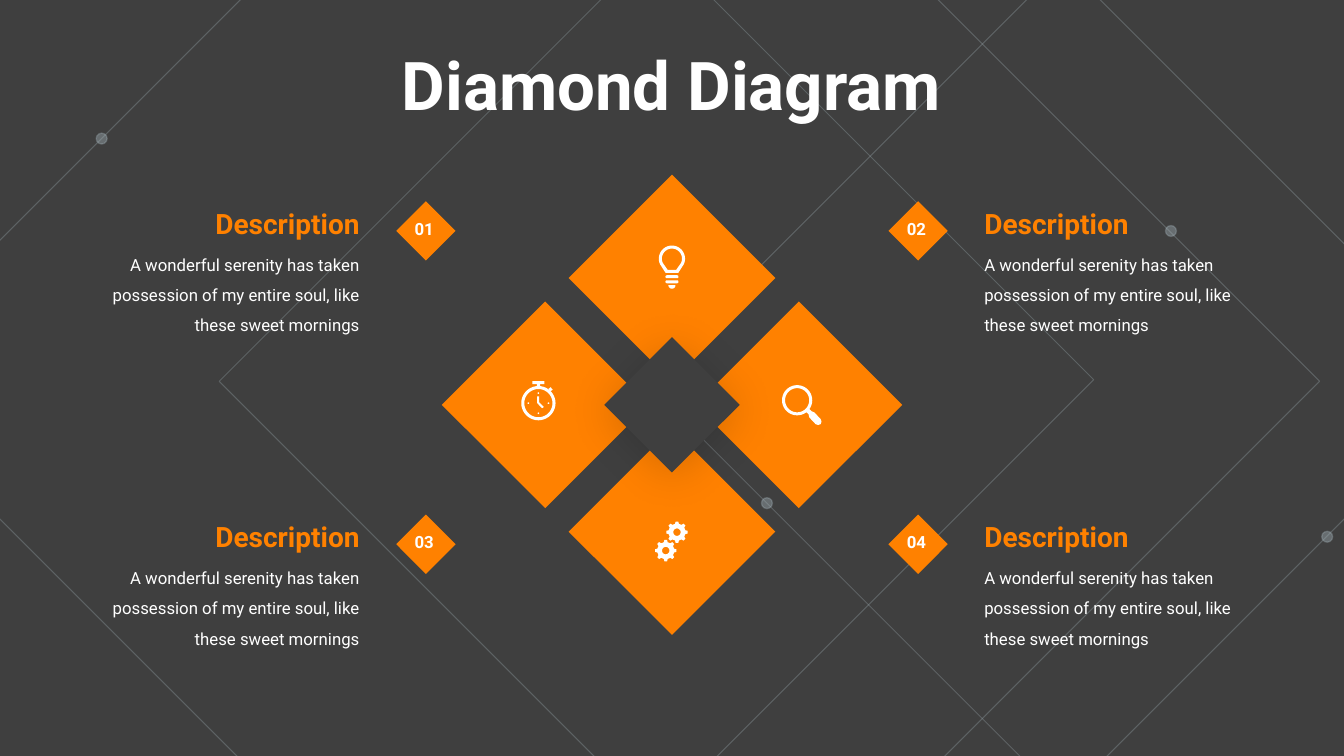
import math

import pptx
import pptx.dml.color
import pptx.enum.shapes
import pptx.enum.text
import pptx.oxml
import pptx.oxml.ns
import pptx.util

# Square grid: 160 columns by 90 rows; every length below is in cells
COLS, ROWS = 160, 90
CELL = pptx.util.Inches(1) / 12
FONT = "Roboto"
COLORS = {"ground": "3F3F3F", "accent": "FF8100", "text": "FFFFFF", "lattice": "A5B4BB"}
BODY = "A wonderful serenity has taken possession of my entire soul, like these sweet mornings"

MID_X, MID_Y = COLS / 2, 48.2
TILE_STEP = 15.1
BADGE_DX, TEXT_DX, TEXT_W = 29.3, 36, 34.8
FIRST_ROW, ROW_STEP = 27.5, 37.3

SHAPE = pptx.enum.shapes.MSO_SHAPE
ALIGN = pptx.enum.text.PP_ALIGN


def grid(*cells):
    return [round(c * CELL) for c in cells]


def rgb(name):
    return pptx.dml.color.RGBColor.from_string(COLORS[name])


def paint(fmt, color, alpha=None):
    """Solid colour for a fill, with optional opacity in percent."""
    fmt.solid()
    fmt.fore_color.rgb = rgb(color)
    if alpha is not None:
        clr = fmt._xPr.find(".//" + pptx.oxml.ns.qn("a:srgbClr"))
        clr.append(pptx.oxml.parse_xml(
            f'<a:alpha {pptx.oxml.ns.nsdecls("a")} val="{alpha * 1000}"/>'))


def style(sp, fill=None, alpha=None, line=None):
    sp.shadow.inherit = False
    if fill:
        paint(sp.fill, fill, alpha)
    else:
        sp.fill.background()
    if line:
        sp.line.width = pptx.util.Pt(line)
        paint(sp.line.fill, "lattice", 29)
    else:
        sp.line.fill.background()
    return sp


def add_preset(s, kind, cx, cy, w, h, **fmt):
    sp = s.shapes.add_shape(kind, *grid(cx - w / 2, cy - h / 2, w, h))
    return style(sp, **fmt)


def add_diamond(s, cx, cy, side, fill="accent"):
    sp = add_preset(s, SHAPE.RECTANGLE, cx, cy, side, side, fill=fill)
    sp.rotation = 45
    return sp


def add_outline(s, *contours, **fmt):
    """Closed outline; a contour inside another one is a hole."""
    builder = s.shapes.build_freeform(*grid(*contours[0][0]))
    for i, points in enumerate(contours):
        if i:
            builder.move_to(*grid(*points[0]))
        builder.add_line_segments([grid(*pt) for pt in points[1:]])
    return style(builder.convert_to_shape(), **fmt)


def set_text(sp, text, size=12, color="text", bold=False, align=ALIGN.LEFT,
             spacing=None, before=None, anchor=None, grow=True):
    tf = sp.text_frame
    tf.word_wrap = True
    auto = pptx.enum.text.MSO_AUTO_SIZE
    tf.auto_size = auto.SHAPE_TO_FIT_TEXT if grow else auto.NONE
    if anchor is not None:
        tf.vertical_anchor = anchor
    p = tf.paragraphs[0]
    p.alignment = align
    if spacing:
        p.line_spacing = spacing
    if before:
        p.space_before = pptx.util.Pt(before)
    r = p.add_run()
    r.text = text
    r.font.name, r.font.size, r.font.bold = FONT, pptx.util.Pt(size), bold
    r.font.color.rgb = rgb(color)


def add_text(s, x, y, w, h, text, **fmt):
    set_text(s.shapes.add_textbox(*grid(x, y, w, h)), text, **fmt)


def polar(cx, cy, radius, degrees):
    a = math.radians(degrees)
    return cx + radius * math.cos(a), cy + radius * math.sin(a)


def arc(cx, cy, radius, start=0, end=360, steps=40):
    return [polar(cx, cy, radius, start + (end - start) * i / steps)
            for i in range(steps + 1)]


# Background lattice
def add_lattice(s):
    for cx, cy, half in ((126.6, 45.4, 49.8), (91.6, 45.4, 65.5), (56.8, 45.2, 73.4)):
        corners = [polar(cx, cy, half, a) for a in (90, 180, 270, 0)]
        add_outline(s, corners + corners[:1], line=0.75)
    for cx, cy in ((91.3, 59.9), (139.4, 27.5), (158, 63.9), (12.1, 16.5)):
        add_preset(s, SHAPE.OVAL, cx, cy, 1.3, 1.3, fill="lattice", alpha=40, line=1)


def add_title(s):
    title = s.shapes.title
    title.left, title.top, title.width, title.height = grid(21.7, 3.4, 116.5, 13.2)
    set_text(title, "Diamond Diagram", size=48, bold=True, align=ALIGN.CENTER,
             before=10, anchor=pptx.enum.text.MSO_ANCHOR.MIDDLE, grow=False)
    s.shapes[-1].element.addnext(title.element)  # in front of the lattice


# Four tiles around a shaded hub
def add_tiles(s):
    for dx, dy in ((1, 0), (-1, 0), (0, 1), (0, -1)):
        add_diamond(s, MID_X + dx * TILE_STEP, MID_Y + dy * TILE_STEP, 17.4)
    hub = add_diamond(s, MID_X, MID_Y, 11.4, fill="ground")
    blur, dist = pptx.util.Pt(31), pptx.util.Pt(4)
    effects = hub.element.spPr.find(pptx.oxml.ns.qn("a:effectLst"))
    effects.append(pptx.oxml.parse_xml(
        f'<a:outerShdw {pptx.oxml.ns.nsdecls("a")} blurRad="{blur}" dist="{dist}" '
        'dir="5400000" algn="t" rotWithShape="0"><a:srgbClr val="000000">'
        '<a:alpha val="15000"/></a:srgbClr></a:outerShdw>'))


def add_description(s, number, side, row):
    """Badge and text; side is -1 for left and 1 for right."""
    cx, cy = MID_X + side * BADGE_DX, FIRST_ROW + row * ROW_STEP
    align = ALIGN.RIGHT if side < 0 else ALIGN.LEFT
    for dy, w, h, text, fmt in (
            (1, TEXT_W, 11.7, BODY, {"spacing": 1.5}),
            (-3.5, 25.1, 5.3, "Description", {"size": 20, "color": "accent", "bold": True})):
        x = MID_X + TEXT_DX if side > 0 else MID_X - TEXT_DX - w
        add_text(s, x, cy + dy, w, h, text, align=align, **fmt)
    add_diamond(s, cx, cy, 5)
    add_text(s, cx - 2.9, cy - 2.1, 5.4, 3.6, f"{number:02}", bold=True, align=ALIGN.CENTER)


# Icons
def add_bulb(s, cx=80, cy=30.8):
    glass = arc(cx, cy, 1.56, 155, 385) + [(cx + 0.75, cy + 1.7), (cx - 0.75, cy + 1.7)]
    hollow = arc(cx, cy, 1.2, 155, 385) + [(cx + 0.5, cy + 1.35), (cx - 0.5, cy + 1.35)]
    add_outline(s, glass + glass[:1], hollow + hollow[:1], fill="text")
    for dy in (2.15, 2.75):
        bar = add_preset(s, SHAPE.ROUNDED_RECTANGLE, cx, cy + dy, 1.56, 0.36, fill="text")
        bar.adjustments[0] = 0.5
    tip = arc(cx, cy + 3.15, 0.42, 0, 180)
    add_outline(s, tip + tip[:1], fill="text")


def add_stopwatch(s, cx=64.1, cy=48):
    add_outline(s, arc(cx, cy, 2.04), arc(cx, cy, 1.68), fill="text")
    for dy, w, h in ((-2.45, 1.44, 0.36), (-2.1, 0.4, 0.5)):
        add_preset(s, SHAPE.RECTANGLE, cx, cy + dy, w, h, fill="text")
    knob = [(1.2, -1.7), (1.45, -1.9), (1.7, -1.6), (1.4, -1.4)]
    hand = [(0.1, -0.8), (-0.15, -0.8), (-0.15, 0), (0.45, 0.6), (0.65, 0.45), (0.1, -0.1)]
    for part in (knob, hand):
        add_outline(s, [(cx + x, cy + y) for x, y in part + part[:1]], fill="text")
    for angle in range(0, 360, 90):
        add_preset(s, SHAPE.OVAL, *polar(cx, cy, 1.2, angle), 0.2, 0.2, fill="text")


def add_magnifier(s, cx=94.9, cy=47.65):
    handle = [(1.1, 1.43), (1.35, 1.65), (1.45, 2.05), (2.2, 2.85), (2.5, 2.95), (2.8, 2.85),
              (2.9, 2.55), (2.8, 2.25), (2.05, 1.45), (1.7, 1.3), (1.45, 1.05)]
    add_outline(s, arc(cx, cy, 1.8), arc(cx, cy, 1.44),
                [(cx + x, cy + y) for x, y in handle + handle[:1]], fill="text")


def add_gear(s, cx, cy):
    tooth = ((-13, 1.02), (-7, 1.28), (7, 1.28), (13, 1.02))
    rim = [polar(cx, cy, radius, turn + offset)
           for turn in range(0, 360, 45) for offset, radius in tooth]
    add_outline(s, rim + rim[:1], arc(cx, cy, 0.44), fill="text")


def main():
    prs = pptx.Presentation()
    prs.slide_width, prs.slide_height = grid(COLS, ROWS)
    s = prs.slides.add_slide(prs.slide_layouts[5])
    paint(s.background.fill, "ground")

    add_lattice(s)
    add_title(s)
    add_tiles(s)
    for i in range(4):
        add_description(s, i + 1, side=1 if i % 2 else -1, row=i // 2)
    add_stopwatch(s)
    add_gear(s, 80.6, 63.36)
    add_gear(s, 79.26, 65.55)
    add_bulb(s)
    add_magnifier(s)

    prs.save("out.pptx")


if __name__ == "__main__":
    main()
